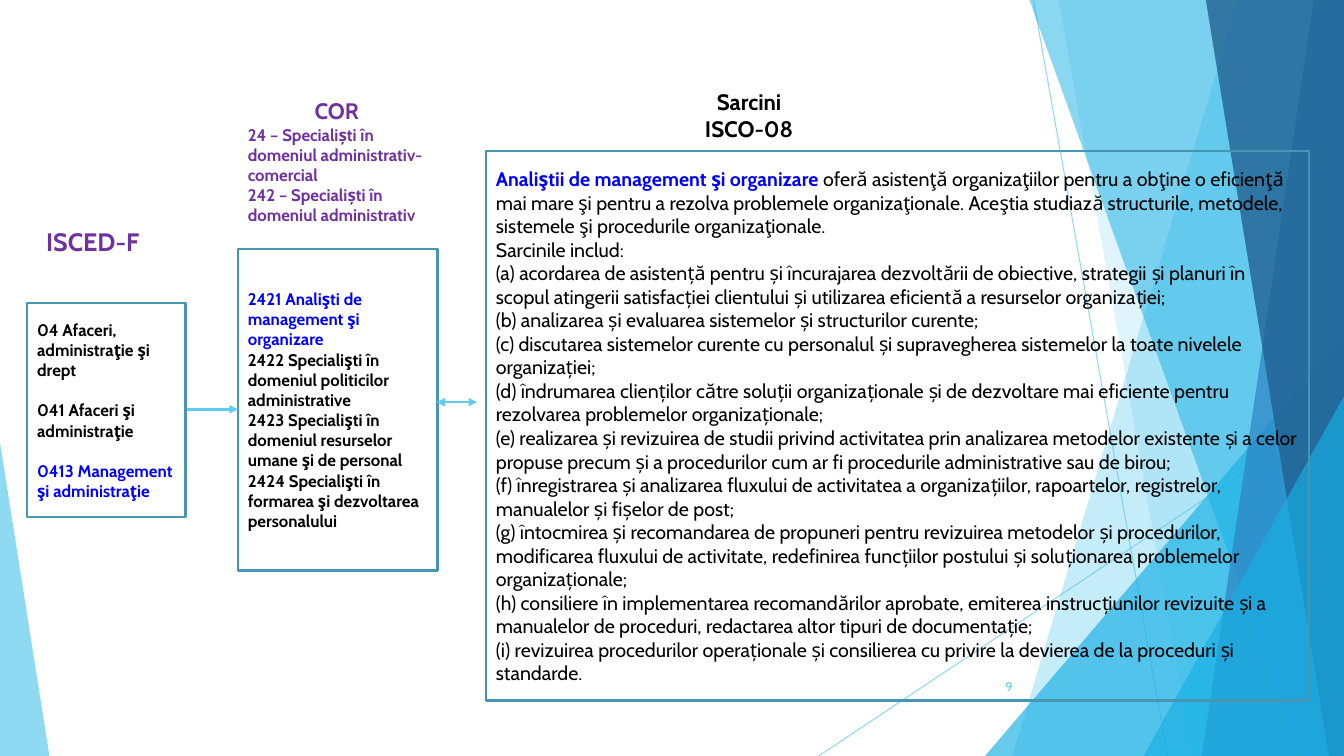
from dataclasses import dataclass

from pptx import Presentation, util as u
from pptx.dml.color import RGBColor
from pptx.enum import shapes, text
from pptx.oxml.ns import qn
from lxml import etree

FONT = "Cabin"
COLS, ROWS = 13.33, 7.5
SKY = RGBColor(0x5F, 0xCB, 0xEF)
CYAN = RGBColor(0x17, 0xB0, 0xE4)
BLUE = RGBColor(0x2E, 0x83, 0xC3)
NAVY = RGBColor(0x22, 0x62, 0x92)
FRAME = RGBColor(0x46, 0x96, 0xB1)
LINK = RGBColor(0x00, 0x00, 0xFF)
PURPLE = RGBColor(0x70, 0x30, 0xA0)
BLACK = RGBColor(0x00, 0x00, 0x00)
WHITE = RGBColor(0xFF, 0xFF, 0xFF)
LEFT, CENTER, RIGHT = text.PP_ALIGN.LEFT, text.PP_ALIGN.CENTER, text.PP_ALIGN.RIGHT


@dataclass
class Para:
    text: str
    size: float = 12
    color: RGBColor = BLACK
    bold: bool = True
    align: text.PP_ALIGN = LEFT
    before: float = 0
    lead: str = ""


class Deck:
    """Draws styled elements on the current slide, in columns and rows of its grid."""

    def __init__(self):
        self.prs = Presentation()
        self.prs.slide_width, self.prs.slide_height = u.Inches(COLS), u.Inches(ROWS)
        self.col = self.prs.slide_width / COLS
        self.row = self.prs.slide_height / ROWS
        self.slide = self.prs.slides.add_slide(self.prs.slide_layouts[6])

    def place(self, *lengths):
        return [round(n * unit) for n, unit in zip(lengths, (self.col, self.row) * 2)]

    def fade(self, sp, opacity):
        for clr in sp._element.spPr.iter(qn("a:srgbClr")):
            etree.SubElement(clr, qn("a:alpha"), val=str(opacity * 1000))

    def facet(self, sp, color, opacity):
        sp.shadow.inherit = False
        sp.fill.solid()
        sp.fill.fore_color.rgb = color
        sp.line.fill.background()
        self.fade(sp, opacity)

    def polygon(self, points, color, opacity):
        start, *rest = [self.place(*pt) for pt in points]
        builder = self.slide.shapes.build_freeform(*start)
        builder.add_line_segments(rest, close=True)
        self.facet(builder.convert_to_shape(), color, opacity)

    def triangle(self, at, apex, color, opacity):
        sp = self.slide.shapes.add_shape(shapes.MSO_SHAPE.ISOSCELES_TRIANGLE, *self.place(*at))
        sp.adjustments[0] = apex
        self.facet(sp, color, opacity)

    def line(self, start, end, width, opacity=100, heads=()):
        cx = self.slide.shapes.add_connector(
            shapes.MSO_CONNECTOR.STRAIGHT, *self.place(*start, *end))
        cx.line.color.rgb = SKY
        cx.line.width = u.Pt(width)
        etree.SubElement(cx._element.spPr, qn("a:effectLst"))
        if opacity < 100:
            self.fade(cx, opacity)
        ln = cx._element.spPr.find(qn("a:ln"))
        for head in heads:
            etree.SubElement(ln, qn(head), type="triangle")

    def fill_text(self, sp, paras):
        tf = sp.text_frame
        tf.word_wrap = True
        tf.vertical_anchor = text.MSO_ANCHOR.MIDDLE
        for i, para in enumerate(paras):
            p = tf.add_paragraph() if i else tf.paragraphs[0]
            p.alignment = para.align
            if para.before:
                p.space_before = u.Pt(para.before)
            p.font.name, p.font.size = FONT, u.Pt(para.size)
            p.font.color.rgb, p.font.bold = para.color, para.bold
            if para.lead:
                r = p.add_run()
                r.text = para.lead
                r.font.color.rgb, r.font.bold = LINK, True
            p.add_run().text = para.text

    def label(self, at, paras):
        self.fill_text(self.slide.shapes.add_textbox(*self.place(*at)), paras)

    def box(self, at, paras, fill=None, line=None):
        sp = self.slide.shapes.add_shape(shapes.MSO_SHAPE.RECTANGLE, *self.place(*at))
        sp.shadow.inherit = False
        if fill is None:
            sp.fill.background()
        else:
            sp.fill.solid()
            sp.fill.fore_color.rgb = fill
        if line is None:
            sp.line.fill.background()
        else:
            sp.line.color.rgb = line
            sp.line.width = u.Pt(1.5)
        self.fill_text(sp, paras)


TASKS = [
    "Sarcinile includ:",
    "(a) acordarea de asistență pentru și încurajarea dezvoltării de obiective, strategii și planuri în scopul atingerii satisfacției clientului și utilizarea eficientă a resurselor organizației;",
    "(b) analizarea și evaluarea sistemelor și structurilor curente;",
    "(c) discutarea sistemelor curente cu personalul și supravegherea sistemelor la toate nivelele organizației;",
    "(d) îndrumarea clienților către soluții organizaționale și de dezvoltare mai eficiente pentru rezolvarea problemelor organizaționale;",
    "(e) realizarea și revizuirea de studii privind activitatea prin analizarea metodelor existente și a celor propuse precum și a procedurilor cum ar fi procedurile administrative sau de birou;",
    "(f) înregistrarea și analizarea fluxului de activitatea a organizațiilor, rapoartelor, registrelor, manualelor și fișelor de post;",
    "(g) întocmirea și recomandarea de propuneri pentru revizuirea metodelor și procedurilor, modificarea fluxului de activitate, redefinirea funcțiilor postului și soluționarea problemelor organizaționale;",
    "(h) consiliere în implementarea recomandărilor aprobate, emiterea instrucțiunilor revizuite și a manualelor de proceduri, redactarea altor tipuri de documentație;",
    "(i) revizuirea procedurilor operaționale și consilierea cu privire la devierea de la proceduri și standarde.",
]
INTRO = Para(
    "oferă asistenţă organizaţiilor pentru a obţine o eficienţă mai mare şi pentru a rezolva problemele organizaţionale. Aceştia studiază structurile, metodele, sistemele şi procedurile organizaţionale.",
    14, bold=False, lead="Analiştii de management şi organizare ")
OCCUPATIONS = [
    "2422 Specialişti în domeniul politicilor administrative",
    "2423 Specialişti în domeniul resurselor umane şi de personal",
    "2424 Specialişti în formarea şi dezvoltarea personalului",
]


def backdrop(deck):
    def band(top, bottom, color, opacity):
        deck.polygon([(top, 0), (COLS, 0), (COLS, ROWS), (bottom, ROWS)], color, opacity)

    deck.line((10.25, 0), (11.58, ROWS), 0.75, 70)
    deck.line((COLS, 4.03), (8.12, ROWS), 0.75, 70)
    band(12.28, 10.04, SKY, 36)
    band(10.5, 11.83, SKY, 20)
    deck.triangle((9.77, 3.33, 3.56, 4.17), 1, CYAN, 66)
    band(10.21, 12.91, CYAN, 50)
    band(13.03, 11.92, BLUE, 70)
    band(11.96, 13.18, NAVY, 80)
    deck.triangle((11.34, 3.93, 1.99, 3.57), 1, CYAN, 66)
    deck.triangle((0, 4.39, 0.49, 3.11), 0, SKY, 70)


def main():
    deck = Deck()
    backdrop(deck)
    deck.label((9.39, 6.61, 0.75, 0.4), [Para("9", 9, SKY, False, RIGHT)])
    deck.box((0.27, 3.01, 1.57, 2.12), [
        Para("04 Afaceri, administraţie şi drept"),
        Para("041 Afaceri şi administraţie", before=14.5),
        Para("0413 Management şi administraţie", color=LINK, before=14.5),
    ], line=FRAME)
    deck.box((4.82, 1.5, 8.16, 5.45),
             [INTRO] + [Para(task, 14, bold=False) for task in TASKS], line=FRAME)
    deck.box((2.36, 2.47, 1.98, 3.19),
             [Para("2421 Analişti de management şi organizare", color=LINK)]
             + [Para(job) for job in OCCUPATIONS], line=FRAME)
    deck.line((1.85, 4.06), (2.36, 4.06), 0, heads=["a:tailEnd"])
    deck.label((0.27, 2.1, 1.3, 0.59), [Para("ISCED-F", 18, PURPLE, align=CENTER)])
    deck.box((2.36, 0.88, 1.96, 1.44), [
        Para("COR", 16, PURPLE, align=CENTER),
        Para("24 – Specialiști în domeniul administrativ-comercial", color=PURPLE),
        Para("242 – Specialiști în domeniul administrativ", color=PURPLE),
    ], fill=WHITE)
    deck.label((6.45, 0.85, 1.96, 0.59),
               [Para(line, 16, align=CENTER) for line in ("Sarcini", "ISCO-08")])
    deck.line((4.33, 3.99), (4.73, 3.99), 1, heads=["a:headEnd", "a:tailEnd"])
    deck.prs.save("out.pptx")


if __name__ == "__main__":
    main()
